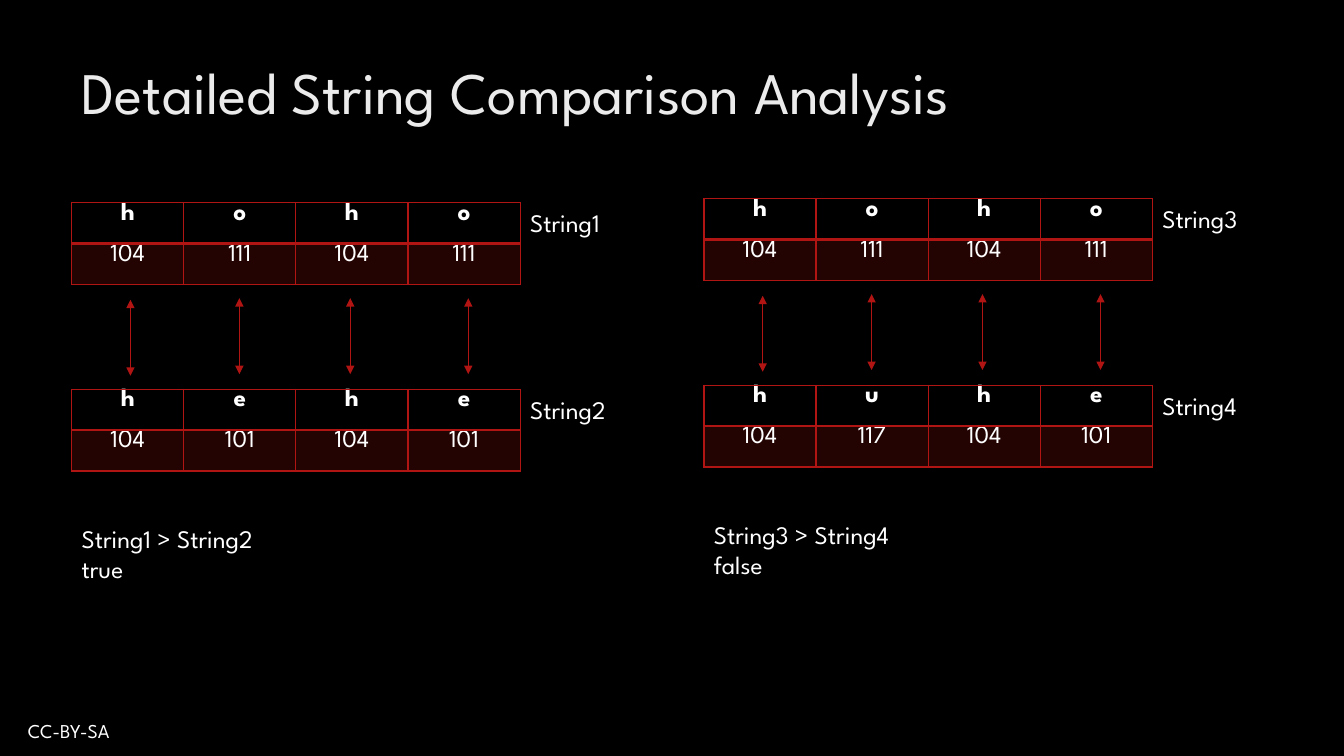
from dataclasses import dataclass

from lxml import etree
from pptx import Presentation
from pptx.dml.color import RGBColor
from pptx.enum.shapes import MSO_CONNECTOR
from pptx.enum.text import MSO_ANCHOR, MSO_AUTO_SIZE, PP_ALIGN
from pptx.oxml.ns import qn
from pptx.slide import Slide
from pptx.table import _Cell
from pptx.text.text import TextFrame
from pptx.util import Pt

STRAIGHT = MSO_CONNECTOR.STRAIGHT
TOP = MSO_ANCHOR.TOP
GROW, FIXED = MSO_AUTO_SIZE.SHAPE_TO_FIT_TEXT, MSO_AUTO_SIZE.NONE
LEFT, CENTER = PP_ALIGN.LEFT, PP_ALIGN.CENTER


@dataclass(frozen=True)
class Theme:
    font: str = "League Spartan"
    background: str = "000000"
    text: str = "FFFFFF"
    title: str = "EBEBEB"
    accent: str = "B01513"
    tint_alpha: int = 20
    title_size: float = 42
    body_size: float = 18
    footer_size: float = 14
    thin: float = 1
    thick: float = 2
    arrow: float = 0.75


@dataclass(frozen=True)
class NamedString:
    name: str
    value: str


@dataclass(frozen=True)
class Comparison:
    left: float
    top: float
    first: NamedString
    second: NamedString
    result: str


THEME = Theme()
COL_W, ROW_H = 80.1, 29.25
TABLE_STEP = 133.2
VERDICT_DY = 225.4
ARROW_XS = (42, 119.8, 199, 283.3)
ARROW_TOP, ARROW_BOTTOM = 68.2, 122.4
FIRST_ARROW_DROP = 1.2

COMPARISONS = (
    Comparison(51.2, 144.8, NamedString("String1", "hoho"),
               NamedString("String2", "hehe"), "true"),
    Comparison(502.8, 141.9, NamedString("String3", "hoho"),
               NamedString("String4", "huhe"), "false"),
)


def write(tf: TextFrame, text: str, *, size: float = THEME.body_size,
          color: str = THEME.text, bold: bool = False,
          align: PP_ALIGN = LEFT) -> None:
    """Fill a text frame, one paragraph per line of text."""
    for i, line in enumerate(text.split("\n")):
        p = tf.add_paragraph() if i else tf.paragraphs[0]
        p.alignment = align
        r = p.add_run()
        r.text = line
        r.font.name = THEME.font
        r.font.size = Pt(size)
        r.font.bold = bold
        r.font.color.rgb = RGBColor.from_string(color)


def add_text(s: Slide, text: str, x: float, y: float, w: float, h: float, *,
             size: float = THEME.body_size, color: str = THEME.text,
             auto_size: MSO_AUTO_SIZE = GROW) -> None:
    tf = s.shapes.add_textbox(Pt(x), Pt(y), Pt(w), Pt(h)).text_frame
    tf.word_wrap = True
    tf.auto_size = auto_size
    write(tf, text, size=size, color=color)


def set_border(cell: _Cell, side: str, width: float) -> None:
    ln = etree.SubElement(cell._tc.get_or_add_tcPr(), qn(f"a:ln{side}"), w=str(Pt(width)))
    fill = etree.SubElement(ln, qn("a:solidFill"))
    etree.SubElement(fill, qn("a:srgbClr"), val=THEME.accent)


def tint(cell: _Cell) -> None:
    cell.fill.solid()
    cell.fill.fore_color.rgb = RGBColor.from_string(THEME.accent)
    clr = cell._tc.tcPr.find(f"{qn('a:solidFill')}/{qn('a:srgbClr')}")
    etree.SubElement(clr, qn("a:alpha"), val=str(THEME.tint_alpha * 1000))


def add_string_table(s: Slide, string: NamedString, x: float, y: float) -> None:
    """Letters above their character codes, with the name at the right."""
    cols = len(string.value)
    table = s.shapes.add_table(2, cols, Pt(x), Pt(y), Pt(cols * COL_W),
                               Pt(2 * ROW_H)).table
    table.first_row = table.horz_banding = False
    for row in table.rows:
        row.height = Pt(ROW_H)
    for col, letter in enumerate(string.value):
        table.columns[col].width = Pt(COL_W)
        for row, text in enumerate((letter, str(ord(letter)))):
            is_letter = row == 0
            cell = table.cell(row, col)
            cell.margin_top = cell.margin_bottom = 0
            cell.vertical_anchor = TOP
            write(cell.text_frame, text, bold=is_letter, align=CENTER)
            shared_side = "B" if is_letter else "T"
            for side in "LRTB":
                set_border(cell, side, THEME.thick if side == shared_side else THEME.thin)
            if is_letter:
                cell.fill.background()
            else:
                tint(cell)
    add_text(s, string.name, x + cols * COL_W, y, 77.8, 29.1)


def add_arrow(s: Slide, x: float, top: float, bottom: float) -> None:
    c = s.shapes.add_connector(STRAIGHT, Pt(x), Pt(bottom), Pt(x), Pt(top))
    c.line.color.rgb = RGBColor.from_string(THEME.accent)
    c.line.width = Pt(THEME.arrow)
    sp_pr = c._element.spPr
    for end in ("a:headEnd", "a:tailEnd"):
        etree.SubElement(sp_pr.find(qn("a:ln")), qn(end), type="triangle")
    etree.SubElement(sp_pr, qn("a:effectLst"))


def add_comparison(s: Slide, c: Comparison) -> None:
    # Both strings
    for i, string in enumerate((c.first, c.second)):
        add_string_table(s, string, c.left, c.top + i * TABLE_STEP)
    # Letter-by-letter arrows
    for i, dx in enumerate(ARROW_XS):
        y = c.top + (FIRST_ARROW_DROP if i == 0 else 0)
        add_arrow(s, c.left + dx, y + ARROW_TOP, y + ARROW_BOTTOM)
    # Verdict
    add_text(s, f"{c.first.name} > {c.second.name}\n{c.result}",
             c.left, c.top + VERDICT_DY, 195.8, 51)


def main() -> None:
    prs = Presentation()
    prs.slide_width, prs.slide_height = Pt(960), Pt(540)
    s = prs.slides.add_slide(prs.slide_layouts[6])
    s.background.fill.solid()
    s.background.fill.fore_color.rgb = RGBColor.from_string(THEME.background)

    # Footer and title
    add_text(s, "CC-BY-SA", 12.8, 509.8, 408, 24.3, size=THEME.footer_size)
    add_text(s, "Detailed String Comparison Analysis", 51.2, 36, 741, 110,
             size=THEME.title_size, color=THEME.title, auto_size=FIXED)

    # The two comparisons
    for comparison in COMPARISONS:
        add_comparison(s, comparison)

    prs.save("out.pptx")


if __name__ == "__main__":
    main()
